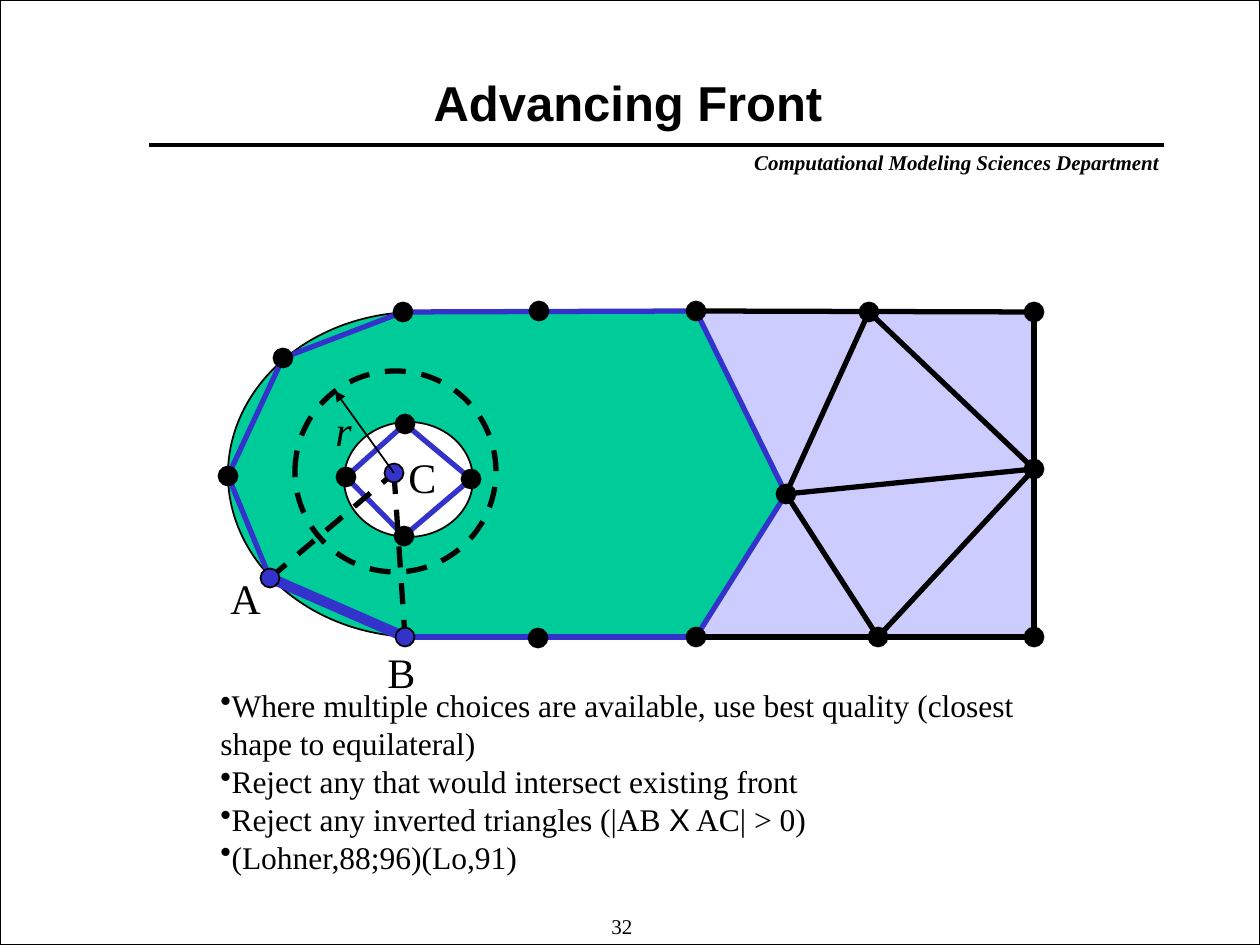
"""Build the Advancing Front mesh slide."""
from lxml.etree import SubElement
from pptx import Presentation
from pptx.dml.color import RGBColor as Rgb
from pptx.enum.dml import MSO_LINE as Dash
from pptx.enum.shapes import MSO_CONNECTOR as Conn, MSO_SHAPE as Kind
from pptx.enum.text import MSO_ANCHOR as Anchor, PP_ALIGN as Align
from pptx.oxml.ns import qn
from pptx.util import Pt

HUES = {"ink": "000000", "front": "3333CC", "open": "00CC99",
        "mesh": "CCCCFF", "paper": "FFFFFF"}
SCALE = 914400 / 126
SERIF, SANS = "Times New Roman", "Arial"
DOT = 19


def emu(px):
    return round(px * SCALE)


def hue(name):
    return Rgb.from_string(HUES[name])


class Board:
    def __init__(self, slide):
        self.slide = slide
        self.shapes = slide.shapes

    def paint(self, shape, fill, line, width=1, dash=False):
        shape.shadow.inherit = False
        if fill:
            shape.fill.solid()
            shape.fill.fore_color.rgb = hue(fill)
        else:
            shape.fill.background()
        if line:
            self.stroke(shape.line, line, width, dash)
        else:
            shape.line.fill.background()

    def stroke(self, line, color, width, dash):
        line.color.rgb = hue(color)
        line.width = Pt(width)
        if dash:
            line.dash_style = Dash.DASH

    def shape(self, kind, box, fill=None, line="ink", width=1, dash=False):
        item = self.shapes.add_shape(kind, *map(emu, box))
        self.paint(item, fill, line, width, dash)

    def dot(self, spot, fill="ink"):
        x, y = spot
        self.shape(Kind.OVAL, (x - DOT / 2, y - DOT / 2, DOT, DOT), fill)

    def area(self, spots, fill):
        pen = self.shapes.build_freeform(*spots[0], scale=SCALE)
        pen.add_line_segments(spots[1:], close=True)
        self.paint(pen.convert_to_shape(), fill, None)

    def line(self, start, end, color="ink", width=3, dash=False, arrow=False):
        item = self.shapes.add_connector(
            Conn.STRAIGHT, *map(emu, (*start, *end)))
        self.stroke(item.line, color, width, dash)
        props = item._element.spPr
        if arrow:
            SubElement(props.find(qn("a:ln")), qn("a:tailEnd"), type="triangle")
        SubElement(props, qn("a:effectLst"))

    def text(self, box, lines, size, font=SERIF, bold=False, slant=False,
             align=Align.LEFT, anchor=Anchor.TOP, wrap=False, bullet=False):
        frame = self.shapes.add_textbox(*map(emu, box)).text_frame
        frame.word_wrap = wrap
        frame.vertical_anchor = anchor
        frame.text = "\n".join(lines)
        for para in frame.paragraphs:
            para.alignment = align
            if bullet:
                props = para._p.get_or_add_pPr()
                props.set("marL", "0")
                props.set("indent", "0")
                SubElement(props, qn("a:buChar"), char="•")
            head, cross, rest = para.text.partition("X")
            if cross:
                para.runs[0].text = head
                for part in (cross, rest):
                    para.add_run().text = part
            for run in para.runs:
                face = run.font
                face.name = SANS if run.text == "X" else font
                face.size = Pt(size)
                face.bold, face.italic = bold, slant
                face.color.rgb = hue("ink")


NODES = {
    "top1": (403, 312), "top2": (539, 311), "top3": (696, 311),
    "top4": (869, 312), "top5": (1034, 312), "right": (1034, 469),
    "low5": (1034, 637), "low4": (878, 637), "low3": (696, 637),
    "low2": (538, 638), "mid": (786, 494), "arc1": (283, 358),
    "arc2": (228, 476), "north": (405, 424), "west": (346, 477),
    "east": (471, 479), "south": (404, 536),
}
TIPS = {"A": (270, 578), "B": (405, 637), "C": (394, 473)}
SPOTS = NODES | TIPS
HOLE = ["north", "east", "south", "west", "north"]
FRONT = ["A", "arc2", "arc1", "top1", "top3", "mid", "low3", "B"]
RIM = ["top3", "top5", "low5", "low3"]
FAN = ["top4", "mid", "low4", "right", "top4"]
LABELS = {"A": (218, 566, 55, 63), "B": (375, 640, 53, 63),
          "C": (396, 445, 53, 63)}
NOTES = [
    "Where multiple choices are available, use best quality "
    "(closest shape to equilateral)",
    "Reject any that would intersect existing front",
    "Reject any inverted triangles (|AB X AC| > 0)",
    "(Lohner,88;96)(Lo,91)",
]


def main():
    deck = Presentation()
    deck.slide_width, deck.slide_height = emu(1260), emu(945)
    board = Board(deck.slides.add_slide(deck.slide_layouts[6]))

    def chain(names, **style):
        for start, end in zip(names, names[1:]):
            board.line(SPOTS[start], SPOTS[end], **style)

    board.line((149, 145), (1164, 145), width=2)
    board.text((741, 143, 431, 38), ["Computational Modeling Sciences Department"],
               12, bold=True, slant=True, align=Align.RIGHT)
    board.text((597, 907, 50, 38), ["32"], 12, align=Align.CENTER)
    board.shape(Kind.RECTANGLE, (0, 0, 1260, 945), width=0.75)
    board.text((160, 43, 936, 117), ["Advancing Front"], 28, SANS, bold=True,
               align=Align.CENTER, anchor=Anchor.MIDDLE, wrap=True)

    board.shape(Kind.OVAL, (228, 312, 379, 325), "open")
    board.shape(Kind.RECTANGLE, (412, 312, 622, 325), "open")
    board.area([SPOTS[name] for name in
                ("top3", "mid", "low3", "low5", "top5")], "mesh")
    board.shape(Kind.RECTANGLE, (407, 314, 11, 322), "open", None)
    board.shape(Kind.OVAL, (344, 422, 129, 115), "paper")

    chain(HOLE, color="front")
    chain(["A", "B"], color="front", width=6)
    chain(FRONT, color="front")
    chain(["A", "C", "B"], dash=True)
    chain(RIM)
    chain(FAN)
    chain(["mid", "right"])
    for spot in NODES.values():
        board.dot(spot)
    for name, spot in TIPS.items():
        board.dot(spot, "front")
        board.text(LABELS[name], [name], 24)

    board.text((208, 680, 852, 202), NOTES, 18, anchor=Anchor.MIDDLE,
               wrap=True, bullet=True)
    board.shape(Kind.OVAL, (295, 371, 201, 201), width=3, dash=True)
    board.line(TIPS["C"], (335, 391), width=1, arrow=True)
    board.text((323, 398, 42, 63), ["r"], 24, slant=True)
    deck.save("out.pptx")


if __name__ == "__main__":
    main()
